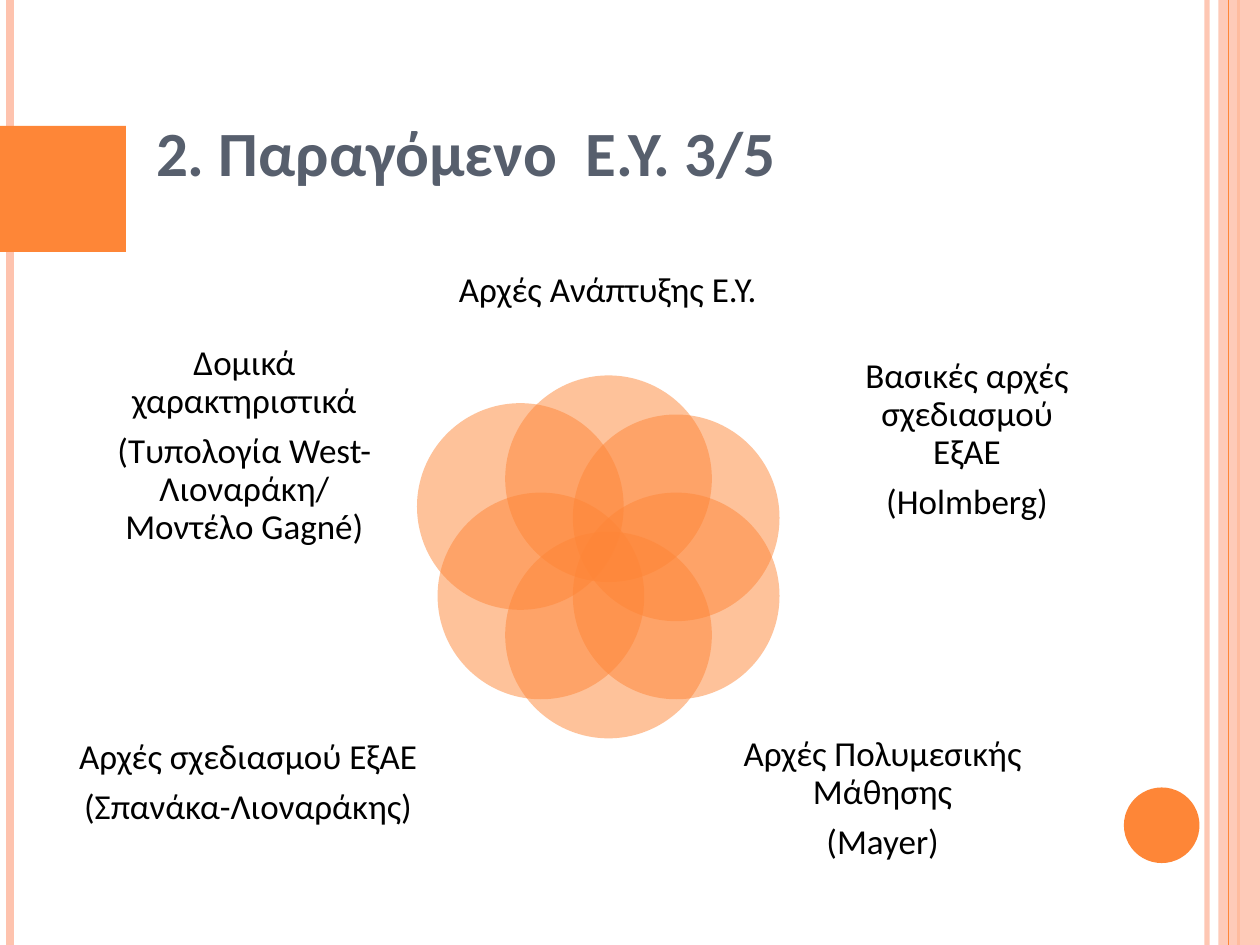
from math import cos, radians, sin

from lxml import etree
from pptx import Presentation
from pptx.dml.color import RGBColor
from pptx.enum.shapes import MSO_CONNECTOR, MSO_SHAPE
from pptx.enum.text import MSO_ANCHOR, PP_ALIGN
from pptx.oxml.ns import qn
from pptx.util import Inches, Pt

STRAIGHT = MSO_CONNECTOR.STRAIGHT
OVAL, RECTANGLE = MSO_SHAPE.OVAL, MSO_SHAPE.RECTANGLE
BOTTOM, MIDDLE = MSO_ANCHOR.BOTTOM, MSO_ANCHOR.MIDDLE
CENTER = PP_ALIGN.CENTER

FONT = "Calibri"
ORANGE, PEACH, SLATE, BLACK = "FE8637", "FEC3AE", "575F6D", "000000"
WIDTH, HEIGHT = 10, 7.5

# x, line width in points, colour, opacity in percent
STRIPES = [
    (9.58, 3, PEACH, 93),
    (0.08, 4.5, PEACH, 100),
    (9.83, 1.5, ORANGE, 100),
]
TAG_OUTLINE = [
    (0.18, 0.87), (0.86, 0.87), (0.88, 0.88), (1.13, 1.27),
    (1.13, 1.32), (0.88, 1.71), (0.86, 1.73), (0.18, 1.73),
]

FLOWER_X, FLOWER_Y = 4.83, 4.42
ORBIT, PETAL = 0.62, 1.64
# The upper left petal stands a little apart from the regular ring.
LOOSE_PETAL = (4.13, 4.02)

# left, top, width, height, paragraphs
LABELS = [
    (2.44, 1.75, 4.77, 1.12, ["Αρχές Ανάπτυξης Ε.Υ."]),
    (6.7, 2.81, 1.95, 1.37, ["Βασικές αρχές σχεδιασμού ΕξΑΕ", "(Holmberg)"]),
    (5.35, 5.78, 3.31, 1.12, ["Αρχές Πολυμεσικής Μάθησης", "(Mayer)"]),
    (0.5, 5.53, 2.94, 1.37, ["Αρχές σχεδιασμού ΕξΑΕ", "(Σπανάκα-Λιοναράκης)"]),
    (0.87, 2.59, 2.14, 1.9,
     ["Δομικά χαρακτηριστικά", "(Τυπολογία West-Λιοναράκη/ Μοντέλο Gagné)"]),
]


def paint(color_format, color, opacity=100):
    """Set a solid fill's colour and opacity in percent."""
    color_format.fore_color.rgb = RGBColor.from_string(color)
    if opacity < 100:
        node = color_format._xPr.find(qn("a:solidFill"))[0]
        etree.SubElement(node, qn("a:alpha"), val=str(opacity * 1000))


def fill_shape(shape, color, opacity=100):
    shape.shadow.inherit = False
    shape.line.fill.background()
    shape.fill.solid()
    paint(shape.fill, color, opacity)


def add_plain_shape(slide, kind, left, top, width, height, color, opacity=100):
    shape = slide.shapes.add_shape(
        kind, Inches(left), Inches(top), Inches(width), Inches(height))
    fill_shape(shape, color, opacity)


def add_stripe(slide, x, weight, color, opacity=100):
    """Draw a vertical line over the whole slide height."""
    stripe = slide.shapes.add_connector(
        STRAIGHT, Inches(x), Inches(0), Inches(x), Inches(HEIGHT))
    stripe.line.width = Pt(weight)
    stripe.line.fill.solid()
    paint(stripe.line.fill, color, opacity)
    etree.SubElement(stripe._element.spPr, qn("a:effectLst"))


def add_tag(slide):
    start, *others = TAG_OUTLINE
    builder = slide.shapes.build_freeform(*start, scale=Inches(1))
    builder.add_line_segments(others, close=True)
    fill_shape(builder.convert_to_shape(), ORANGE)


def add_text_box(slide, left, top, width, height, anchor):
    box = slide.shapes.add_textbox(
        Inches(left), Inches(top), Inches(width), Inches(height))
    box.text_frame.word_wrap = True
    box.text_frame.vertical_anchor = anchor
    return box.text_frame


def write(para, text, size, color, bold=False):
    para.text = text
    font = para.runs[0].font
    font.name, font.size, font.bold = FONT, Pt(size), bold
    font.color.rgb = RGBColor.from_string(color)


def add_text_shadow(span):
    effects = etree.Element(qn("a:effectLst"))
    shadow = etree.SubElement(
        effects, qn("a:outerShdw"), blurRad="38100", dist="38100", dir="2700000")
    tone = etree.SubElement(shadow, qn("a:srgbClr"), val=BLACK)
    etree.SubElement(tone, qn("a:alpha"), val="43000")
    span.font._element.find(qn("a:solidFill")).addnext(effects)


def add_title(slide, text):
    frame = add_text_box(slide, 1.14, 0.36, 8.03, 1.19, BOTTOM)
    para = frame.paragraphs[0]
    write(para, text, 36, SLATE, bold=True)
    add_text_shadow(para.runs[0])


def add_label(slide, left, top, width, height, lines):
    frame = add_text_box(slide, left, top, width, height, MIDDLE)
    frame.margin_left = frame.margin_right = 0
    frame.margin_top = frame.margin_bottom = 0
    for index, line in enumerate(lines):
        para = frame.paragraphs[0] if index == 0 else frame.add_paragraph()
        write(para, line, 20, BLACK)
        para.alignment = CENTER
        para.line_spacing = 0.9
        para.space_after = Pt(7)


def add_flower(slide):
    centers = [
        (FLOWER_X + ORBIT * cos(radians(angle)), FLOWER_Y + ORBIT * sin(radians(angle)))
        for angle in range(-90, 151, 60)
    ]
    for x, y in centers + [LOOSE_PETAL]:
        add_plain_shape(
            slide, OVAL, x - PETAL / 2, y - PETAL / 2, PETAL, PETAL, ORANGE, 50)


def add_frame(slide):
    for stripe in STRIPES:
        add_stripe(slide, *stripe)
    add_plain_shape(slide, RECTANGLE, 9.67, 0, 0.33, HEIGHT, PEACH, 87)
    add_stripe(slide, 9.75, 0.75, ORANGE)
    add_plain_shape(slide, OVAL, 8.92, 6.25, 0.6, 0.6, ORANGE)
    add_tag(slide)


def main():
    deck = Presentation()
    deck.slide_width, deck.slide_height = Inches(WIDTH), Inches(HEIGHT)
    slide = deck.slides.add_slide(deck.slide_layouts[6])
    add_frame(slide)
    add_title(slide, "2. Παραγόμενο  Ε.Υ. 3/5")
    add_flower(slide)
    for label in LABELS:
        add_label(slide, *label)
    deck.save("out.pptx")


if __name__ == "__main__":
    main()
